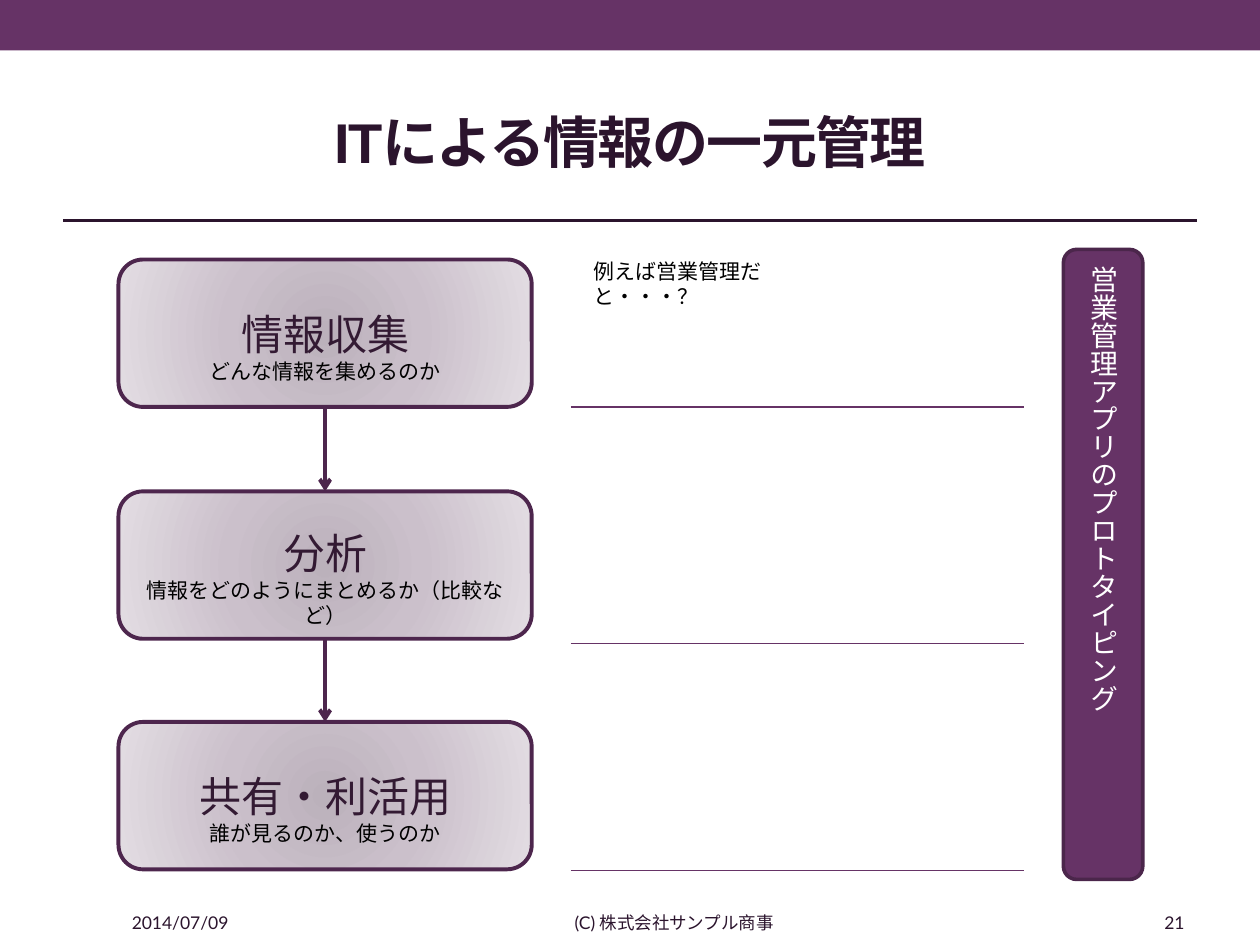
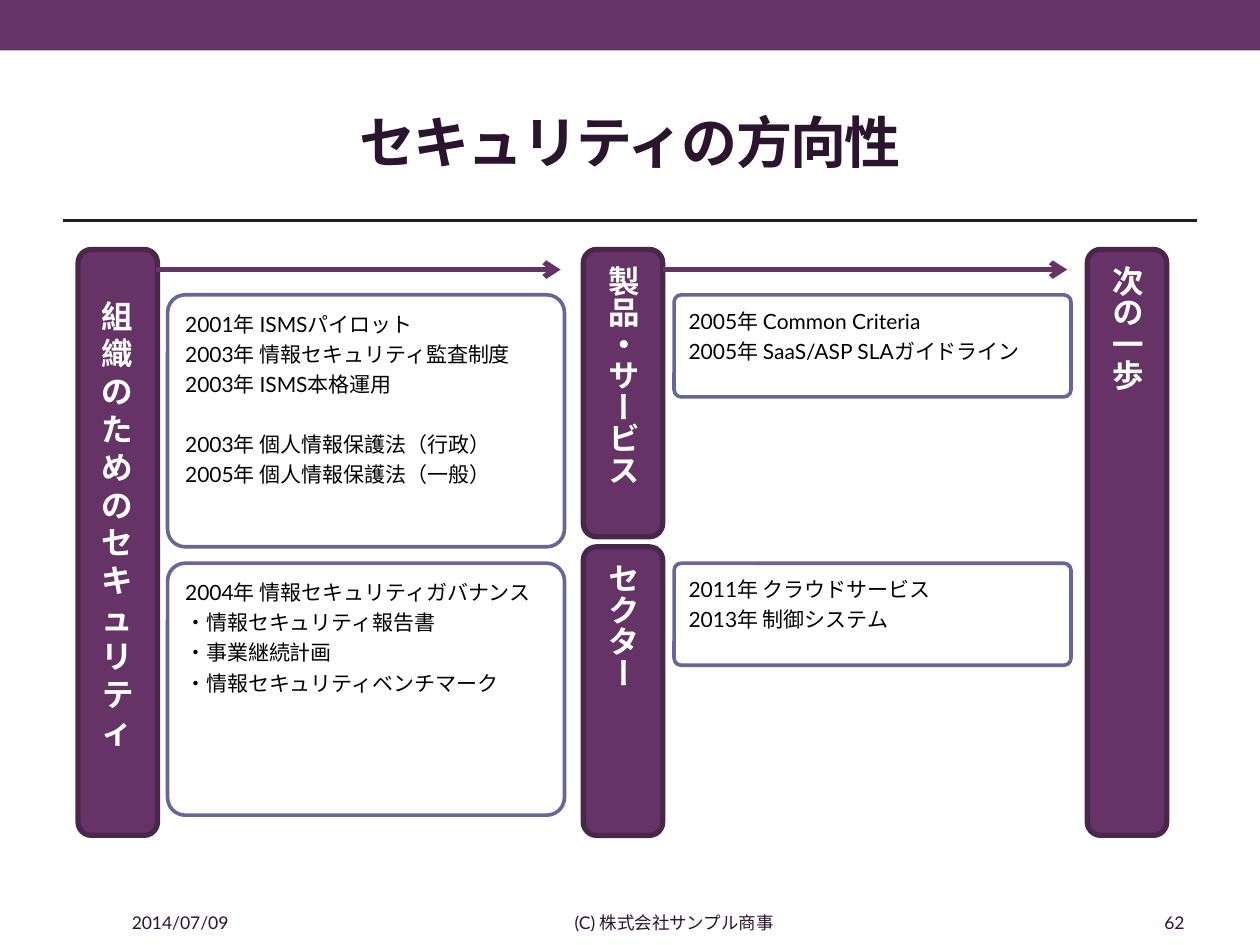
from lxml import etree
from pptx import Presentation
from pptx.dml.color import RGBColor
from pptx.enum.shapes import MSO_CONNECTOR, MSO_SHAPE
from pptx.enum.text import MSO_ANCHOR, PP_ALIGN
from pptx.oxml import parse_xml
from pptx.oxml.ns import nsdecls, qn
from pptx.util import Inches, Pt

PURPLE, INK, WHITE, BLACK = "663366", "2B142D", "FFFFFF", "000000"
BAR_EDGE, STEP_EDGE, STEP_INK, CARD_EDGE = "4B264B", "4D264D", "331A33", "666699"
LEFT, CENTER, RIGHT = PP_ALIGN.LEFT, PP_ALIGN.CENTER, PP_ALIGN.RIGHT
MIDDLE, TOP = MSO_ANCHOR.MIDDLE, MSO_ANCHOR.TOP
ROUND, RECT = MSO_SHAPE.ROUNDED_RECTANGLE, MSO_SHAPE.RECTANGLE
rgb = RGBColor.from_string


def add_box(s, kind, at, lines=(), fill=None, edge=None, width=1, align=CENTER,
            anchor=MIDDLE, font="Lato", bold=False, vertical=False):
    """Add a shape (or a text box if kind is None); lines are (text, size, colour)."""
    at = [Inches(v) for v in at]
    if kind is None:
        sp = s.shapes.add_textbox(*at)
    else:
        sp = s.shapes.add_shape(kind, *at)
        sp.shadow.inherit = False
        if fill:
            sp.fill.solid()
            sp.fill.fore_color.rgb = rgb(fill)
        if edge:
            sp.line.color.rgb = rgb(edge)
            sp.line.width = Pt(width)
        else:
            sp.line.fill.background()
    tf = sp.text_frame
    tf.word_wrap = True
    tf.vertical_anchor = anchor
    if vertical:
        tf._txBody.bodyPr.set("vert", "eaVert")
    for i, (text, size, color) in enumerate(lines):
        p = tf.add_paragraph() if i else tf.paragraphs[0]
        p.alignment = align
        r = p.add_run()
        r.text = text
        r.font.name, r.font.size, r.font.bold = font, Pt(size), bold
        r.font.color.rgb = rgb(color)
    return sp


def add_line(s, x1, y1, x2, y2, color, width, arrow=False):
    c = s.shapes.add_connector(MSO_CONNECTOR.STRAIGHT, *[Inches(v) for v in (x1, y1, x2, y2)])
    c.line.color.rgb = rgb(color)
    c.line.width = Pt(width)
    if arrow:
        etree.SubElement(c.line._get_or_add_ln(), qn("a:tailEnd"), type="arrow")
    etree.SubElement(c._element.spPr, qn("a:effectLst"))
    return c


prs = Presentation()
prs.slide_width, prs.slide_height = Inches(10), Inches(7.5)

# Shared frame: band, title, rule and footer
slides = []
for title, number in [("ITによる情報の一元管理", "21"), ("セキュリティの方向性", "62")]:
    s = prs.slides.add_slide(prs.slide_layouts[5])
    slides.append(s)
    add_box(s, RECT, (0, 0, 10, 0.4), fill=PURPLE)
    add_line(s, 0.5, 1.75, 9.5, 1.75, INK, 1.5)
    sp = s.shapes.title
    sp.left, sp.top, sp.width, sp.height = [Inches(v) for v in (0.5, 0.58, 9, 1.08)]
    sp.text_frame.vertical_anchor = MIDDLE
    p = sp.text_frame.paragraphs[0]
    p.alignment = CENTER
    r = p.add_run()
    r.text = title
    r.font.name, r.font.size, r.font.bold = "Arial", Pt(32), True
    r.font.color.rgb = rgb(INK)
    r.font._element.set("spc", "-100")
    for x, w, text, align in [(0.5, 1.86, "2014/07/09", CENTER),
                              (2.45, 5.8, "(C) 株式会社サンプル商事", CENTER),
                              (8.33, 1.17, number, RIGHT)]:
        add_box(s, None, (x, 7.14, w, 0.36), [(text, 10, INK)], align=align)

# Slide 1: three steps of information management
s = slides[0]
GLOW = "".join(f'<a:gs pos="{pos}000"><a:srgbClr val="{color}"/></a:gs>'
               for pos, color in [(0, "BBB1BB"), (45, "CBC0CB"), (100, "E3DDE3")])
steps = []
for y, heading, detail in [(2.06, "情報収集", "どんな情報を集めるのか"),
                           (3.9, "分析", "情報をどのようにまとめるか（比較など）"),
                           (5.73, "共有・利活用", "誰が見るのか、使うのか")]:
    sp = add_box(s, ROUND, (0.94, y, 3.28, 1.17),
                 [(heading, 24, STEP_INK), (detail, 12, BLACK)],
                 edge=STEP_EDGE, width=2.25, font="Arial")
    sp.text_frame.paragraphs[0].line_spacing = 1.5
    sp._element.spPr.find(qn("a:prstGeom")).addnext(parse_xml(
        f'<a:gradFill {nsdecls("a")}><a:gsLst>{GLOW}</a:gsLst><a:path path="circle">'
        '<a:fillToRect l="100000" t="100000" r="100000" b="100000"/></a:path></a:gradFill>'))
    steps.append(sp)
for upper, lower in zip(steps, steps[1:]):
    c = add_line(s, 2.58, 3.23, 2.58, 3.9, STEP_EDGE, 2.25, arrow=True)
    c.begin_connect(upper, 2)
    c.end_connect(lower, 0)

sp = add_box(s, None, (4.61, 2, 2.05, 0.3), [("例えば営業管理だと・・・？", 12, BLACK)],
             align=LEFT, anchor=TOP, font="Arial")
sp.text_frame.word_wrap = False
for y in (3.23, 5.11, 6.91):
    add_line(s, 4.53, y, 8.13, y, PURPLE, 0.75)
add_box(s, ROUND, (8.44, 1.98, 0.63, 5), [("営業管理アプリのプロトタイピング", 16, WHITE)],
        PURPLE, BAR_EDGE, 2.08, align=LEFT, font="Arial", vertical=True)

# Slide 2: security themes as bars, with cards of milestones
s = slides[1]
for x, y, h, text, vertical in [(0.62, 1.98, 4.65, "組織のためのセキュリティ", False),
                                (4.63, 1.98, 2.28, "製品・サービス", True),
                                (4.63, 4.34, 2.29, "セクター", True),
                                (8.63, 1.98, 4.65, "次の一歩", True)]:
    sp = add_box(s, ROUND, (x, y, 0.63, h), [(text, 18, WHITE)], PURPLE, BAR_EDGE, 3,
                 align=LEFT if vertical else CENTER, bold=True, vertical=vertical)
    if not vertical:
        sp.text_frame.margin_bottom = Inches(0.35)

cards = [
    (1.33, 2.34, 2, ["2001年 ISMSパイロット", "2003年 情報セキュリティ監査制度",
                     "2003年 ISMS本格運用", "2003年 個人情報保護法（行政）",
                     "2005年 個人情報保護法（一般）"]),
    (1.33, 4.47, 2, ["2004年 情報セキュリティガバナンス", "・情報セキュリティ報告書",
                     "・事業継続計画", "・情報セキュリティベンチマーク"]),
    (5.35, 2.34, 0.81, ["2005年 Common Criteria", "2005年 SaaS/ASP SLAガイドライン"]),
    (5.35, 4.47, 0.81, ["2011年 クラウドサービス", "2013年 制御システム"]),
]
for x, y, h, texts in cards:
    sp = add_box(s, ROUND, (x, y, 3.15, h), [(text, 12, BLACK) for text in texts],
                 WHITE, CARD_EDGE, 2.08, align=LEFT, anchor=TOP)
    sp.adjustments[0] = 0.07
    for p in sp.text_frame.paragraphs:
        p.line_spacing = 1.2
        if p.text.startswith("2003年 ISMS"):
            p.space_after = Pt(17)

for x in (1.24, 5.26):
    add_line(s, x, 2.14, x + 3.21, 2.14, PURPLE, 3, arrow=True)

prs.save("out.pptx")
